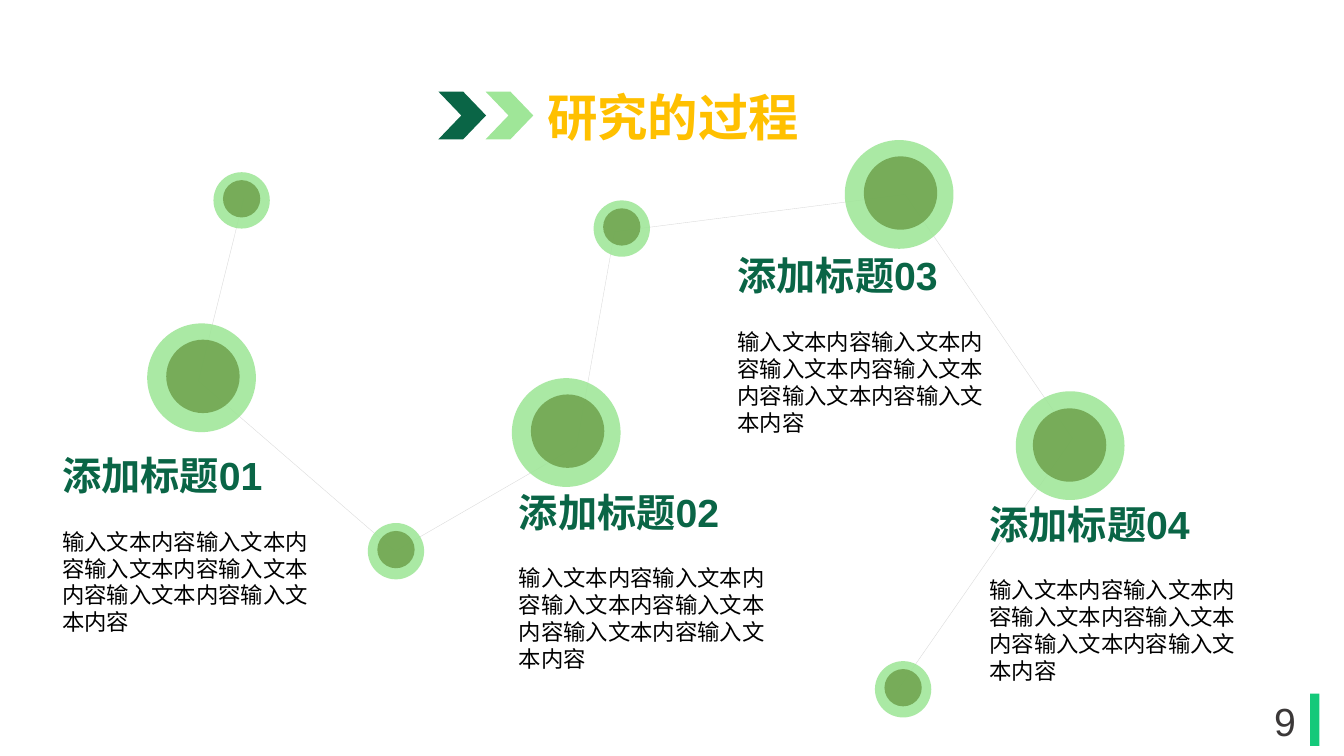
import pptx
import pptx.util
import pptx.dml.color
import pptx.enum.shapes
import pptx.enum.text
import pptx.oxml.ns
import lxml.etree

Cm = pptx.util.Cm
Pt = pptx.util.Pt
RGBColor = pptx.dml.color.RGBColor
Shape = pptx.enum.shapes.MSO_SHAPE
Align = pptx.enum.text.PP_ALIGN
Anchor = pptx.enum.text.MSO_ANCHOR

DARK = RGBColor(0x0A, 0x65, 0x46)
LIGHT = RGBColor(0x9F, 0xE6, 0x98)
CORE = RGBColor(0x70, 0xA4, 0x4F)
GOLD = RGBColor(0xFF, 0xC0, 0x00)
BAR = RGBColor(0x14, 0xC9, 0x7A)
GRAY = RGBColor(0xD9, 0xD9, 0xD9)
INK = RGBColor(0x3B, 0x38, 0x38)
BLACK = RGBColor(0, 0, 0)

deck = pptx.Presentation()
deck.slide_width, deck.slide_height = Cm(33.87), Cm(19.05)
slide = deck.slides.add_slide(deck.slide_layouts[5])
shapes = slide.shapes


def draw(kind, left, top, width, height, color, alpha=100):
    shape = shapes.add_shape(kind, Cm(left), Cm(top), Cm(width), Cm(height))
    shape.shadow.inherit = False
    shape.line.fill.background()
    shape.fill.solid()
    shape.fill.fore_color.rgb = color
    if alpha < 100:
        tone = shape.element.spPr.find(".//" + pptx.oxml.ns.qn("a:srgbClr"))
        lxml.etree.SubElement(tone, pptx.oxml.ns.qn("a:alpha"), val=str(alpha * 1000))
    return shape


def style(para, text, size, color, bold=False, align=Align.LEFT):
    para.text = text
    para.alignment = align
    para.font.name = "Arial"
    para.font.size = Pt(size)
    para.font.bold = bold
    para.font.color.rgb = color


# Page number and its bar
draw(Shape.RECTANGLE, 33.02, 17.48, 0.23, 1.32, BAR)
page = shapes.add_textbox(Cm(31.42), Cm(17.65), Cm(1.93), Cm(1.02)).text_frame
page.word_wrap = True
page.vertical_anchor = Anchor.MIDDLE
style(page.paragraphs[0], "9", 28, INK, align=Align.CENTER)

# Thin line that joins the nodes
route = [(6.15, 4.98), (5, 9.6), (9.96, 13.89), (14.53, 11.25),
         (15.49, 5.84), (22.81, 4.9), (27.03, 11.05), (22.58, 17.45)]
points = [(Cm(x), Cm(y)) for x, y in route]
pen = shapes.build_freeform(*points[0])
pen.add_line_segments(points[1:], close=False)
trail = pen.convert_to_shape()
trail.shadow.inherit = False
trail.fill.background()
trail.line.color.rgb = GRAY
trail.line.width = Pt(0.25)

# Title with two chevrons
title = shapes.title
title.left, title.top, title.width, title.height = Cm(10.97), Cm(2.03), Cm(11.99), Cm(1.8)
title.text_frame.auto_size = pptx.enum.text.MSO_AUTO_SIZE.NONE
title.text_frame.vertical_anchor = Anchor.TOP
style(title.text_frame.paragraphs[0], "研究的过程", 36, GOLD, True, Align.CENTER)
for left, color in [(11.05, DARK), (12.24, LIGHT)]:
    arrow = draw(Shape.CHEVRON, left, 2.31, 1.2, 1.2, color)
    arrow.adjustments[0] = 0.48

# Nodes: halo and core sizes, core offset, then places
SMALL = (1.42, 0.94, 0.24, 0.2)
LARGE = (2.74, 1.85, 0.48, 0.41)
LAST = (2.74, 1.85, 0.43, 0.43)
nodes = [(5.38, 4.34, SMALL), (3.71, 8.15, LARGE), (9.27, 13.18, SMALL),
         (12.9, 9.53, LARGE), (14.96, 5.05, SMALL), (21.29, 3.53, LARGE),
         (25.6, 9.86, LAST), (22.05, 16.66, SMALL)]
for left, top, (halo, core, dx, dy) in nodes:
    draw(Shape.OVAL, left, top, halo, halo, LIGHT, 88)
    draw(Shape.OVAL, left + dx, top + dy, core, core, CORE, 88)

# Text cards
cards = [(1.32, 11.25), (12.83, 12.17), (18.34, 6.22), (24.69, 12.47)]
for number, (left, top) in enumerate(cards, 1):
    card = shapes.add_textbox(Cm(left), Cm(top), Cm(6.78), Cm(5.64)).text_frame
    card.word_wrap = True
    head = card.paragraphs[0]
    style(head, f"添加标题{number:02}", 28, DARK, True)
    head.space_after = Pt(21)
    style(card.add_paragraph(), "输入文本内容" * 6, 16, BLACK)

deck.save("out.pptx")
